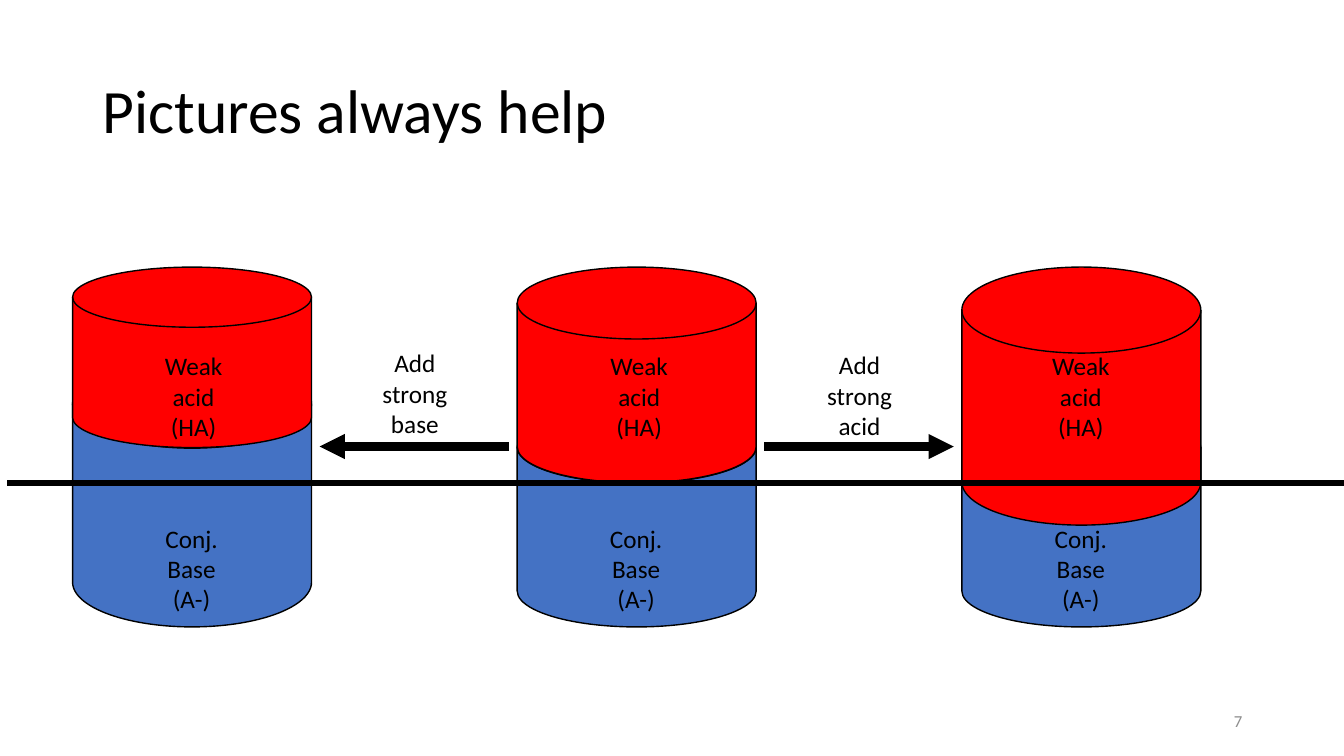
from lxml.etree import SubElement
from pptx import Presentation
from pptx.dml.color import RGBColor
from pptx.enum.shapes import MSO_CONNECTOR, MSO_SHAPE
from pptx.enum.text import MSO_ANCHOR, PP_ALIGN
from pptx.oxml.ns import qn
from pptx.util import Inches, Pt

WIDE, HIGH = 13.33, 7.5
BLACK, RED, BLUE, GREY = "000000", "FF0000", "4472C4", "8C8C8C"
LEFT, STEP = 0.72, 4.41  # first beaker and distance to the next
TOP, BASE, DISK = 2.65, 6.22, 2.37  # beaker top, bottom and width
LABEL, TALL = 0.86, 1.01
MID = 4.79


def color(code):
    return RGBColor.from_string(code)


def style(frame, lines, size, code, align):
    frame.word_wrap = True
    frame.text = "\n".join(lines)
    for para in frame.paragraphs:
        para.alignment = align
        para.font.name = "Calibri"
        para.font.size = Pt(size)
        para.font.color.rgb = color(code)


def add_text(slide, box, lines, size=18, code=BLACK, align=PP_ALIGN.CENTER):
    frame = slide.shapes.add_textbox(*map(Inches, box)).text_frame
    style(frame, lines, size, code, align)
    return frame


def add_line(slide, start, end, width, arrow=False):
    ends = map(Inches, (*start, *end))
    line = slide.shapes.add_connector(MSO_CONNECTOR.STRAIGHT, *ends)
    line.line.color.rgb = color(BLACK)
    line.line.width = Pt(width)
    if arrow:
        SubElement(line.line._get_or_add_ln(), qn("a:tailEnd"), type="triangle")
    SubElement(line._element.spPr, qn("a:effectLst"))


def add_disk(slide, left, top, bottom, code):
    box = map(Inches, (left, top, DISK, bottom - top))
    disk = slide.shapes.add_shape(MSO_SHAPE.FLOWCHART_MAGNETIC_DISK, *box)
    disk.shadow.inherit = False
    disk.fill.solid()
    disk.fill.fore_color.rgb = color(code)
    disk.line.color.rgb = color(BLACK)
    disk.line.width = Pt(1)


def add_beaker(slide, left, blue_top, red_end, acid_in, base_in):
    """Stack weak acid on conjugate base; labels are inset from the left."""
    add_disk(slide, left, blue_top, BASE, BLUE)
    add_disk(slide, left, TOP, red_end, RED)
    add_text(slide, (left + acid_in, 3.43, LABEL, TALL), ["Weak acid", "(HA)"])
    add_text(slide, (left + base_in, 5.14, LABEL, TALL), ["Conj. Base", "(A-)"])


def add_step(slide, left, top, word, back):
    """Draw the arrow across the gap that starts at left, with its caption."""
    near, far = (left + 0.08, 4.43), (left + 1.96, 4.43)
    if back:
        near, far = far, near
    add_line(slide, near, far, 6, arrow=True)
    add_text(slide, (left + 0.39, top, 1.27, TALL), [f"Add strong {word}"])


def add_title(slide, text):
    title = slide.shapes.title
    title.left, title.top = Inches(0.92), Inches(0.4)
    title.width, title.height = Inches(11.5), Inches(1.45)
    style(title.text_frame, [text], 44, BLACK, PP_ALIGN.LEFT)
    title.text_frame.vertical_anchor = MSO_ANCHOR.MIDDLE
    title.text_frame.paragraphs[0].line_spacing = 0.9


def main():
    prs = Presentation()
    prs.slide_width, prs.slide_height = Inches(WIDE), Inches(HIGH)
    slide = prs.slides.add_slide(prs.slide_layouts[5])
    add_title(slide, "Pictures always help")

    beakers = [
        (3.56, 4.44, 0.77, 0.75),
        (4.08, MID, 0.78, 0.75),
        (4.08, 5.21, 0.75, 0.75),
    ]
    for col, levels in enumerate(beakers):
        add_beaker(slide, LEFT + col * STEP, *levels)

    add_line(slide, (0.07, MID), (WIDE, MID), 4.5)
    steps = [(3.4, "base", True), (3.42, "acid", False)]
    for col, step in enumerate(steps):
        add_step(slide, LEFT + DISK + col * STEP, *step)

    number = add_text(slide, (9.42, 6.95, 3, 0.4), ["7"], 12, GREY, PP_ALIGN.RIGHT)
    number.vertical_anchor = MSO_ANCHOR.MIDDLE
    prs.save("out.pptx")


if __name__ == "__main__":
    main()
